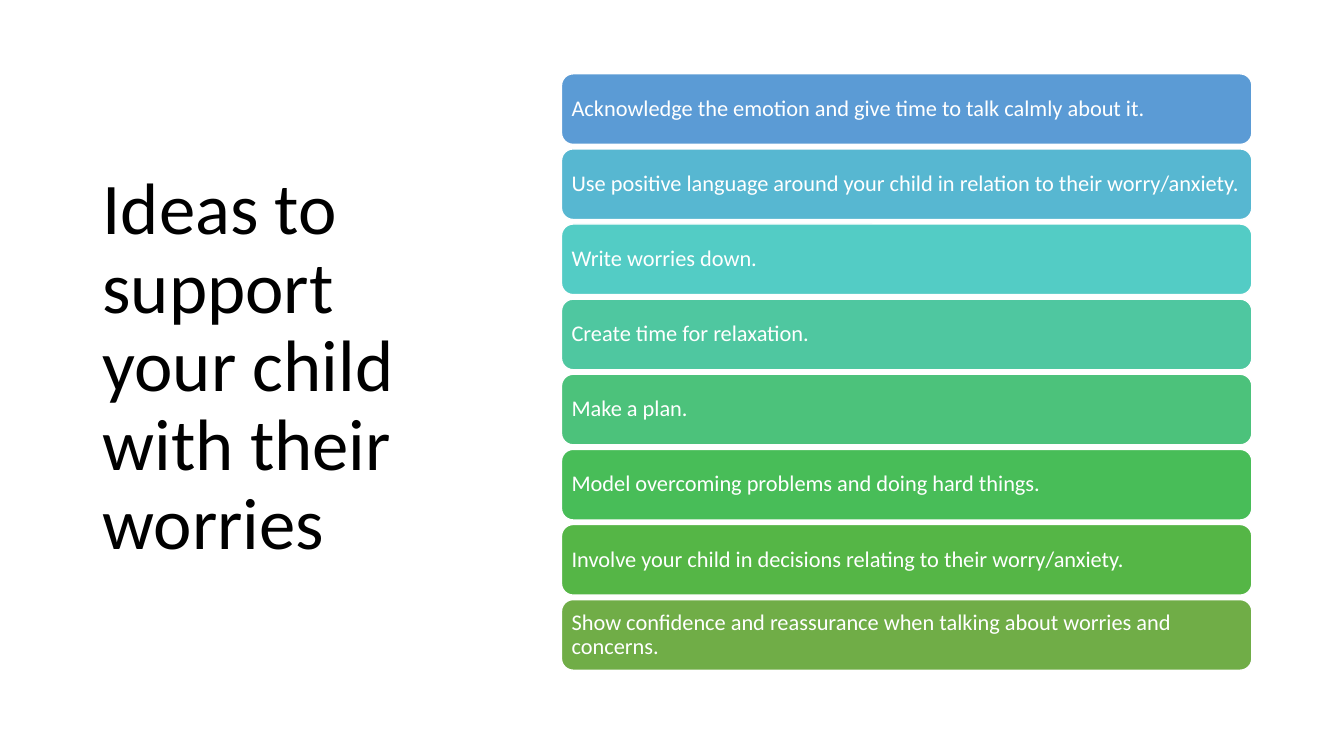
from dataclasses import dataclass

from pptx import Presentation
from pptx.dml.color import RGBColor
from pptx.enum.shapes import MSO_SHAPE
from pptx.enum.text import MSO_ANCHOR, MSO_AUTO_SIZE, PP_ALIGN
from pptx.slide import Slide
from pptx.text.text import TextFrame
from pptx.util import Cm, Pt

ROUNDED = MSO_SHAPE.ROUNDED_RECTANGLE
MIDDLE = MSO_ANCHOR.MIDDLE
NO_AUTOFIT = MSO_AUTO_SIZE.NONE
LEFT = PP_ALIGN.LEFT

FONT = "Calibri"
WHITE = "FFFFFF"
BLACK = "000000"

# Column of bars, in centimetres
BAR_LEFT, BAR_WIDTH, BAR_HEIGHT = 14.15, 17.4, 1.78
FIRST_TOP, LAST_TOP = 1.86, 15.11


@dataclass
class Idea:
    text: str
    fill: str


IDEAS = [
    Idea("Acknowledge the emotion and give time to talk calmly about it.", "5B9BD5"),
    Idea("Use positive language around your child in relation to their worry/anxiety.", "57B7D1"),
    Idea("Write worries down.", "53CCC5"),
    Idea("Create time for relaxation.", "4FC7A0"),
    Idea("Make a plan.", "4CC27B"),
    Idea("Model overcoming problems and doing hard things.", "48BD58"),
    Idea("Involve your child in decisions relating to their worry/anxiety.", "55B646"),
    Idea("Show confidence and reassurance when talking about worries and concerns.", "70AD47"),
]


def color(value: str) -> RGBColor:
    return RGBColor.from_string(value)


def write(frame: TextFrame, text: str, size: float, ink: str) -> None:
    frame.word_wrap = True
    frame.auto_size = NO_AUTOFIT
    frame.vertical_anchor = MIDDLE
    para = frame.paragraphs[0]
    para.alignment = LEFT
    para.line_spacing = 0.9
    span = para.add_run()
    span.text = text
    span.font.name = FONT
    span.font.size = Pt(size)
    span.font.color.rgb = color(ink)


def add_title(page: Slide, text: str) -> None:
    title = page.shapes.title
    title.left, title.top = Cm(2.33), Cm(1.55)
    title.width, title.height = Cm(9.38), Cm(15.46)
    write(title.text_frame, text, 52, BLACK)


def add_bar(page: Slide, idea: Idea, top: float) -> None:
    bar = page.shapes.add_shape(
        ROUNDED, Cm(BAR_LEFT), Cm(top), Cm(BAR_WIDTH), Cm(BAR_HEIGHT)
    )
    bar.shadow.inherit = False
    bar.fill.solid()
    bar.fill.fore_color.rgb = color(idea.fill)
    bar.line.color.rgb = color(WHITE)
    bar.line.width = Pt(1)
    frame = bar.text_frame
    frame.margin_left = frame.margin_top = frame.margin_bottom = Cm(0.17)
    frame.margin_right = Cm(0.1)
    write(frame, idea.text, 16, WHITE)


def main() -> None:
    deck = Presentation()
    deck.slide_width, deck.slide_height = Cm(33.87), Cm(19.05)
    title_only = deck.slide_layouts.get_by_name("Title Only")
    page = deck.slides.add_slide(title_only)

    # Heading on the left
    add_title(page, "Ideas to support your child with their worries")

    # Evenly spaced bars on the right
    pitch = (LAST_TOP - FIRST_TOP) / (len(IDEAS) - 1)
    for row, idea in enumerate(IDEAS):
        add_bar(page, idea, FIRST_TOP + row * pitch)

    deck.save("out.pptx")


if __name__ == "__main__":
    main()
